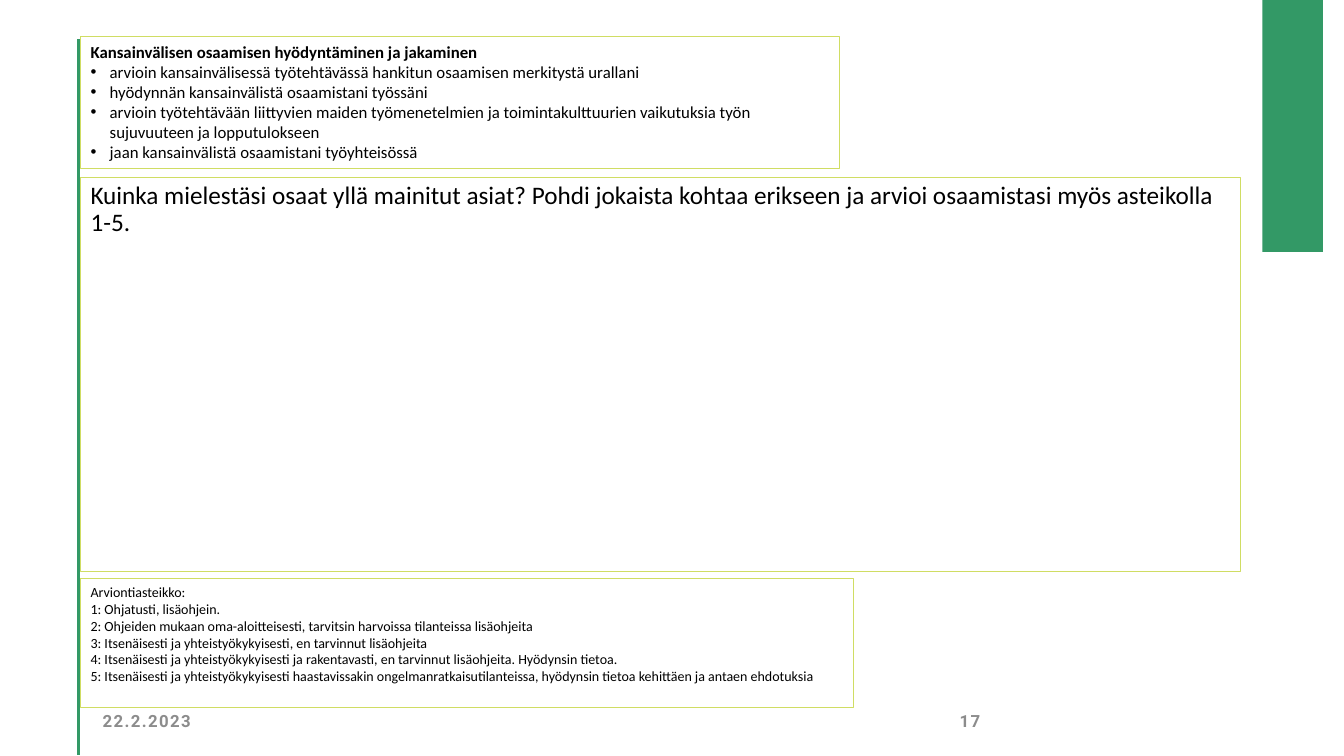
"""Builds a self-assessment slide on using and sharing international skills."""
from dataclasses import dataclass

from lxml import etree
from pptx import Presentation
from pptx import util as u
from pptx.dml.color import RGBColor
from pptx.enum import shapes, text
from pptx.oxml.ns import qn


@dataclass(frozen=True)
class Theme:
    green: RGBColor = RGBColor.from_string("339966")
    lime: RGBColor = RGBColor.from_string("D0DD63")
    black: RGBColor = RGBColor.from_string("000000")
    grey: RGBColor = RGBColor.from_string("8C8C8C")
    body_font: str = "Calibri"
    footer_font: str = "Roboto"
    question_size: int = 18
    skills_size: int = 12
    scale_size: int = 10
    footer_size: int = 12
    rule_width: float = 2
    frame_width: float = 0.75
    bullet_indent: float = 0.19


class SlideBuilder:
    def __init__(self, slide, theme):
        self.slide = slide
        self.theme = theme

    def rule(self, x, top, bottom):
        line = self.slide.shapes.add_connector(
            shapes.MSO_CONNECTOR.STRAIGHT,
            u.Inches(x), u.Inches(top), u.Inches(x), u.Inches(bottom))
        line.line.color.rgb = self.theme.green
        line.line.width = u.Pt(self.theme.rule_width)
        etree.SubElement(line._element.spPr, qn("a:effectLst"))

    def block(self, *place):
        block = self.slide.shapes.add_shape(
            shapes.MSO_SHAPE.RECTANGLE, *map(u.Inches, place))
        block.shadow.inherit = False
        block.fill.solid()
        block.fill.fore_color.rgb = self.theme.green
        block.line.fill.background()

    def text_box(self, place, lines, size, first=None, rest=None):
        box = self.slide.shapes.add_textbox(*map(u.Inches, place))
        frame = box.text_frame
        frame.word_wrap = True
        for index, line in enumerate(lines):
            para = frame.add_paragraph() if index else frame.paragraphs[0]
            para.text = line
            values = {"name": self.theme.body_font, "size": u.Pt(size)}
            values |= (rest if index else first) or {}
            if values.pop("bullet", False):
                self.bullet(para)
            span = para.runs[0]
            span.font.color.rgb = self.theme.black
            for name, value in values.items():
                setattr(span.font, name, value)
        return box

    def framed_text(self, place, lines, size, first=None, rest=None):
        box = self.text_box(place, lines, size, first, rest)
        box.line.color.rgb = self.theme.lime
        box.line.width = u.Pt(self.theme.frame_width)
        return box

    def bullet(self, para):
        properties = para._p.get_or_add_pPr()
        indent = u.Inches(self.theme.bullet_indent)
        properties.set("marL", str(indent))
        properties.set("indent", str(-indent))
        font = etree.SubElement(properties, qn("a:buFont"))
        font.set("typeface", "Arial")
        etree.SubElement(properties, qn("a:buChar")).set("char", "•")

    def footer(self, left, width, words):
        font = {"name": self.theme.footer_font, "bold": True}
        box = self.text_box((left, 6.95, width, 0.4), [words],
                            self.theme.footer_size, font)
        box.text_frame.vertical_anchor = text.MSO_ANCHOR.MIDDLE
        span = box.text_frame.paragraphs[0].runs[0]
        span.font.color.rgb = self.theme.grey
        span._r.get_or_add_rPr().set("spc", "100")


SKILLS = [
    "Kansainvälisen osaamisen hyödyntäminen ja jakaminen",
    "arvioin kansainvälisessä työtehtävässä hankitun osaamisen merkitystä urallani",
    "hyödynnän kansainvälistä osaamistani työssäni",
    "arvioin työtehtävään liittyvien maiden työmenetelmien ja "
    "toimintakulttuurien vaikutuksia työn sujuvuuteen ja lopputulokseen",
    "jaan kansainvälistä osaamistani työyhteisössä",
]
QUESTION = (
    "Kuinka mielestäsi osaat yllä mainitut asiat? Pohdi jokaista kohtaa "
    "erikseen ja arvioi osaamistasi myös asteikolla 1-5."
)
SCALE = [
    "Arviontiasteikko:",
    "1: Ohjatusti, lisäohjein.",
    "2: Ohjeiden mukaan oma-aloitteisesti, tarvitsin harvoissa tilanteissa lisäohjeita",
    "3: Itsenäisesti ja yhteistyökykyisesti, en tarvinnut lisäohjeita",
    "4: Itsenäisesti ja yhteistyökykyisesti ja rakentavasti, en tarvinnut "
    "lisäohjeita. Hyödynsin tietoa.",
    "5: Itsenäisesti ja yhteistyökykyisesti haastavissakin "
    "ongelmanratkaisutilanteissa, hyödynsin tietoa kehittäen ja antaen ehdotuksia",
]


def main():
    deck = Presentation()
    deck.slide_width, deck.slide_height = u.Inches(13.33), u.Inches(7.5)
    theme = Theme()
    page = SlideBuilder(deck.slides.add_slide(deck.slide_layouts[6]), theme)

    page.rule(0.78, 0.39, 7.49)
    page.block(12.52, -0.01, 0.6, 2.51)
    question = page.framed_text((0.8, 1.76, 11.5, 3.91), [QUESTION],
                                theme.question_size)
    question.text_frame.paragraphs[0].line_spacing = 0.9
    page.footer(0.92, 3, "22.2.2023")
    page.footer(9.42, 2.54, "17")
    page.framed_text((0.8, 5.74, 7.67, 1.28), SCALE, theme.scale_size)
    page.framed_text((0.8, 0.36, 7.53, 1.31), SKILLS, theme.skills_size,
                     first={"bold": True}, rest={"bullet": True})
    deck.save("out.pptx")


if __name__ == "__main__":
    main()
